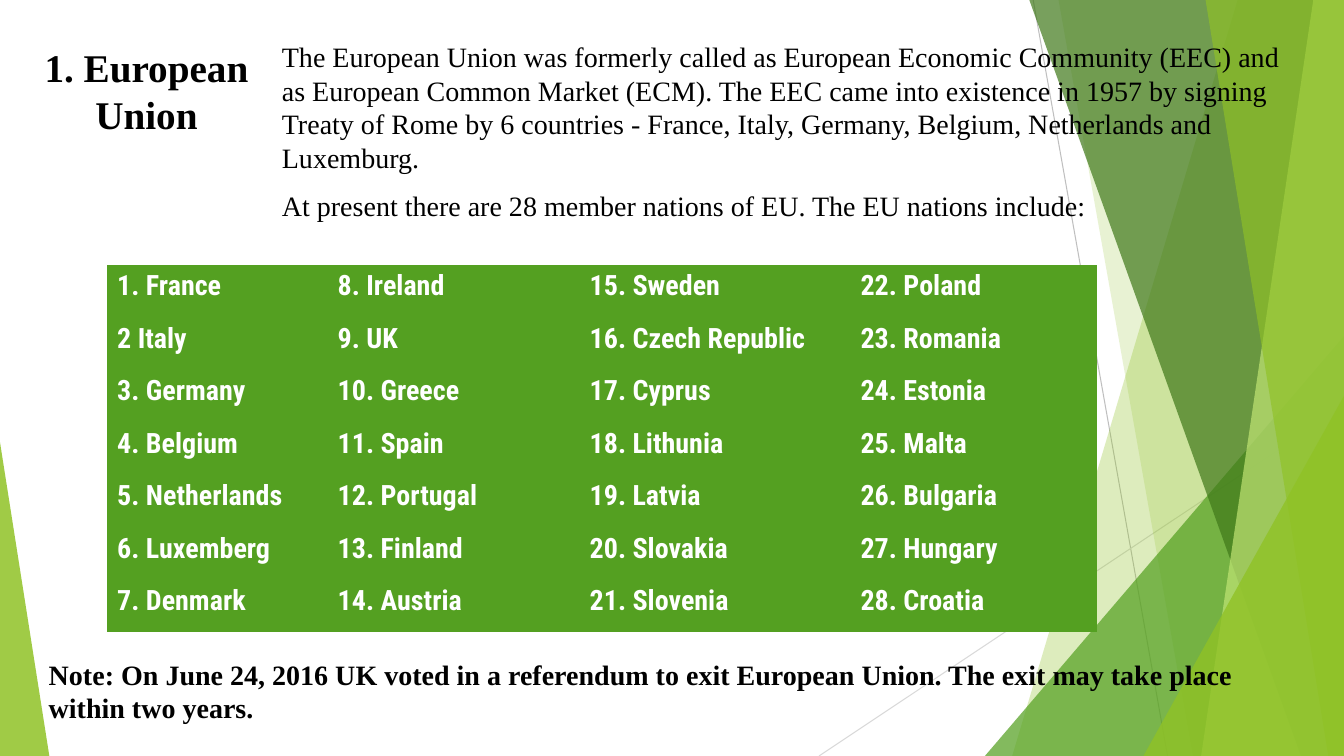
from dataclasses import dataclass

from lxml import etree
from pptx import Presentation
from pptx.dml.color import RGBColor
from pptx.enum.shapes import MSO_CONNECTOR, MSO_SHAPE
from pptx.enum.text import MSO_ANCHOR, PP_ALIGN
from pptx.oxml.ns import qn
from pptx.util import Pt

PX = 9525
WIDTH, HEIGHT = 1280, 720
BLANK_LAYOUT = 6
STRAIGHT = MSO_CONNECTOR.STRAIGHT
TRIANGLE = MSO_SHAPE.ISOSCELES_TRIANGLE
TOP, BOTTOM = MSO_ANCHOR.TOP, MSO_ANCHOR.BOTTOM
LEFT, CENTER = PP_ALIGN.LEFT, PP_ALIGN.CENTER
PLAIN_TABLE_STYLE = "{2D5ABB26-0587-4C30-8999-92F81FD0307C}"


@dataclass(frozen=True)
class Theme:
    lime: str = "90C226"
    pale_lime: str = "C0E474"
    green: str = "54A021"
    dark_green: str = "3F7819"
    grey: str = "BFBFBF"
    light_grey: str = "D9D9D9"
    ink: str = "000000"
    white: str = "FFFFFF"
    serif: str = "Times New Roman"
    condensed: str = "Roboto Condensed"
    title_size: int = 28
    text_size: int = 20


THEME = Theme()

MEMBERS = [
    ["1. France", "2 Italy", "3. Germany", "4. Belgium", "5. Netherlands",
     "6. Luxemberg", "7. Denmark"],
    ["8. Ireland", "9. UK", "10. Greece", "11. Spain", "12. Portugal",
     "13. Finland", "14. Austria"],
    ["15. Sweden", "16. Czech Republic", "17. Cyprus", "18. Lithunia", "19. Latvia",
     "20. Slovakia", "21. Slovenia"],
    ["22. Poland", "23. Romania", "24. Estonia", "25. Malta", "26. Bulgaria",
     "27. Hungary", "28. Croatia"],
]
HISTORY = [
    "The European Union was formerly called as European Economic Community (EEC) and "
    "as European Common Market (ECM). The EEC came into existence in 1957 by signing "
    "Treaty of Rome by 6 countries - France, Italy, Germany, Belgium, Netherlands and "
    "Luxemburg.",
    "At present there are 28 member nations of EU. The EU nations include:",
]
NOTE = ("Note: On June 24, 2016 UK voted in a referendum to exit European Union. "
        "The exit may take place within two years.")


def scaled(*lengths):
    return [length * PX for length in lengths]


def write(frame, *texts, size=THEME.text_size, font=THEME.serif, color=THEME.ink,
          bold=False, align=LEFT, before=0):
    for index, text in enumerate(texts):
        para = frame.add_paragraph() if index else frame.paragraphs[0]
        para.alignment = align
        para.space_before = Pt(before)
        span = para.add_run()
        span.text = text
        span.font.size = Pt(size)
        span.font.name = font
        span.font.bold = bold
        span.font.color.rgb = RGBColor.from_string(color)


def add_text(page, area, *texts, anchor=TOP, **style):
    frame = page.shapes.add_textbox(*scaled(*area)).text_frame
    frame.word_wrap = True
    frame.vertical_anchor = anchor
    write(frame, *texts, **style)


def tint(shape, color, opacity):
    """Fill a shape with a see-through colour and no outline."""
    shape.shadow.inherit = False
    shape.line.fill.background()
    shape.fill.solid()
    shape.fill.fore_color.rgb = RGBColor.from_string(color)
    color_node = next(shape.fill._xPr.iter(qn("a:srgbClr")))
    etree.SubElement(color_node, qn("a:alpha"), val=str(opacity * 1000))


def add_hairline(page, start, end, color):
    line = page.shapes.add_connector(STRAIGHT, *scaled(*start, *end))
    line.line.width = Pt(0.75)
    line.line.color.rgb = RGBColor.from_string(color)
    etree.SubElement(line._element.spPr, qn("a:effectLst"))


def add_band(page, top_x, bottom_x, color, opacity):
    """A full-height facet from a slanted edge to the right slide edge."""
    builder = page.shapes.build_freeform(top_x, -1, scale=PX)
    builder.add_line_segments([(WIDTH, -1), (WIDTH, HEIGHT), (bottom_x, HEIGHT)])
    tint(builder.convert_to_shape(), color, opacity)


def add_corner(page, left, top, width, apex, color, opacity):
    """A triangle standing on the bottom slide edge."""
    corner = page.shapes.add_shape(TRIANGLE, *scaled(left, top, width, HEIGHT - top))
    corner.adjustments[0] = apex
    tint(corner, color, opacity)


def add_facets(page):
    add_hairline(page, (984, 0), (1112, HEIGHT), THEME.grey)
    add_hairline(page, (WIDTH, 387), (780, HEIGHT), THEME.light_grey)
    add_band(page, 1179, 964, THEME.lime, 30)
    add_band(page, 1008, 1136, THEME.lime, 20)
    add_corner(page, 938, 320, 342, 1, THEME.green, 72)
    add_band(page, 980, 1239, THEME.dark_green, 70)
    add_band(page, 1251, 1144, THEME.pale_lime, 70)
    add_band(page, 1148, 1265, THEME.lime, 65)
    add_corner(page, 1089, 377, 191, 1, THEME.lime, 80)
    add_corner(page, 0, 421, 47, 0, THEME.lime, 85)


def add_members(page, left, top, column_widths, row_height):
    row_count = len(MEMBERS[0])
    area = scaled(left, top, sum(column_widths), row_height * row_count)
    table = page.shapes.add_table(row_count, len(MEMBERS), *area).table
    table._tbl.tblPr.find(qn("a:tableStyleId")).text = PLAIN_TABLE_STYLE
    table.first_row = table.horz_banding = False
    for row in table.rows:
        row.height = row_height * PX
    for column_index, (names, width) in enumerate(zip(MEMBERS, column_widths)):
        table.columns[column_index].width = width * PX
        for row_index, name in enumerate(names):
            cell = table.cell(row_index, column_index)
            cell.fill.solid()
            cell.fill.fore_color.rgb = RGBColor.from_string(THEME.green)
            write(cell.text_frame, name, font=THEME.condensed,
                  color=THEME.white, bold=True)


def build_union_slide(deck):
    page = deck.slides.add_slide(deck.slide_layouts[BLANK_LAYOUT])
    # Background decoration
    add_facets(page)
    # Title
    add_text(page, (0, 31, 279, 105), "1. European Union", anchor=BOTTOM,
             size=THEME.title_size, bold=True, align=CENTER)
    # Member nations
    add_members(page, 102, 252, [210, 240, 258, 235], 50)
    # History and closing note
    add_text(page, (259, 33, 983, 192), *HISTORY, before=10)
    add_text(page, (37, 621, 1205, 74), NOTE, bold=True)


def main():
    deck = Presentation()
    deck.slide_width, deck.slide_height = scaled(WIDTH, HEIGHT)
    build_union_slide(deck)
    deck.save("out.pptx")


if __name__ == "__main__":
    main()
